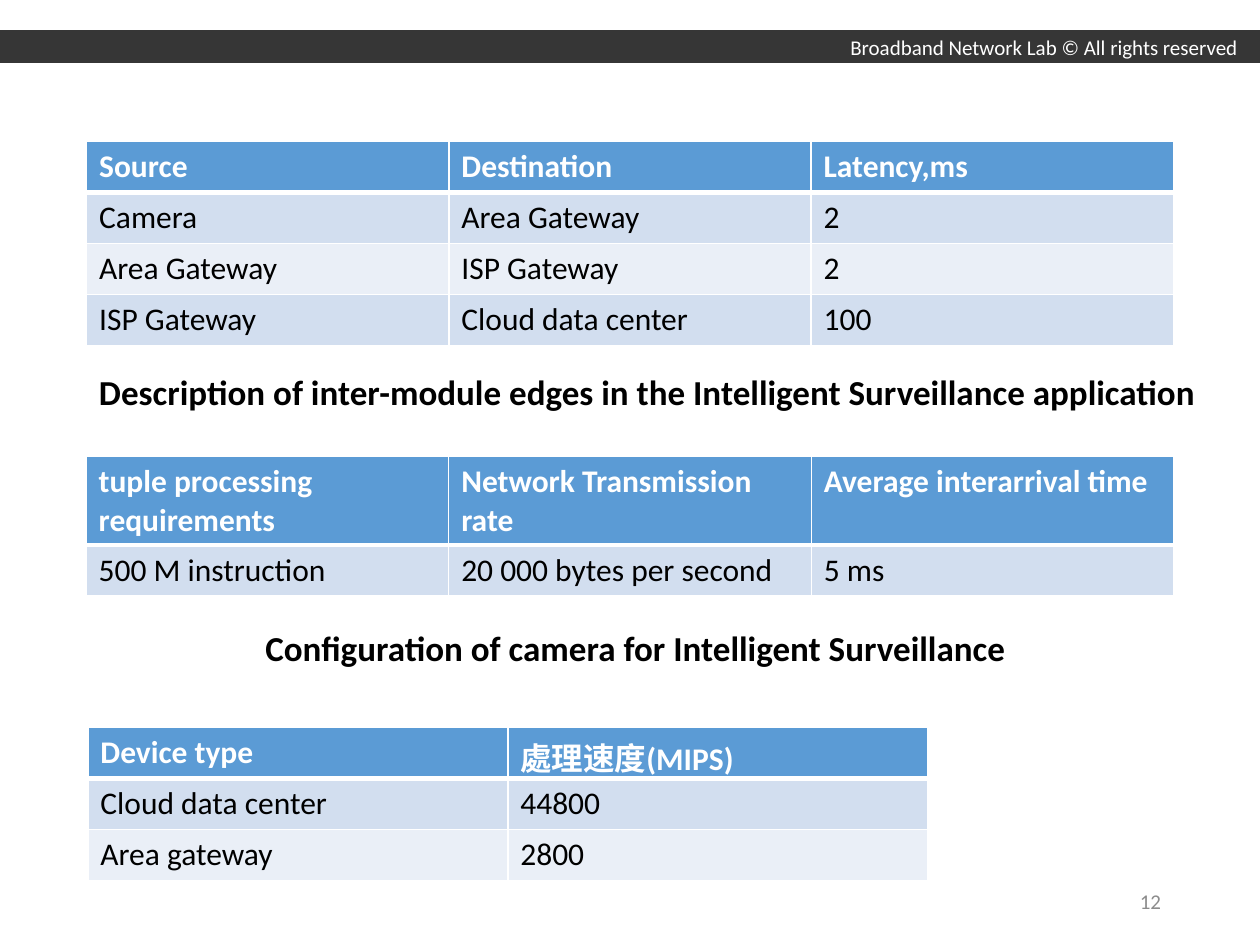
from lxml.etree import SubElement
from pptx import Presentation
from pptx.dml.color import RGBColor
from pptx.enum.shapes import MSO_SHAPE as Shape
from pptx.enum.text import MSO_ANCHOR as Anchor, PP_ALIGN as Align
from pptx.oxml.ns import qn
from pptx.util import Pt


def color(hex_string):
    return RGBColor.from_string(hex_string)


def write(frame, text, size=18, ink="000000", bold=False, align=Align.LEFT):
    paragraph = frame.paragraphs[0]
    paragraph.alignment = align
    run = paragraph.add_run()
    run.text = text
    run.font.name = "Calibri"
    run.font.size = Pt(size)
    run.font.bold = bold
    run.font.color.rgb = color(ink)


class SlideBuilder:
    white = "FFFFFF"
    bar_fill = "363636"
    header_fill = "5B9BD5"
    band_fills = ("D2DEEF", "EAEFF7")
    row_height = 29.2

    def __init__(self, slide):
        self.slide = slide

    def bar(self, left, top, width, height):
        shape = self.slide.shapes.add_shape(
            Shape.RECTANGLE, Pt(left), Pt(top), Pt(width), Pt(height))
        shape.shadow.inherit = False
        shape.fill.solid()
        shape.fill.fore_color.rgb = color(self.bar_fill)
        shape.line.fill.background()

    def text(self, left, top, width, height, text, wrap=True,
             anchor=Anchor.TOP, **style):
        shape = self.slide.shapes.add_textbox(
            Pt(left), Pt(top), Pt(width), Pt(height))
        frame = shape.text_frame
        frame.word_wrap = wrap
        frame.vertical_anchor = anchor
        write(frame, text, **style)

    def borders(self, cell, top, bottom):
        properties = cell._tc.get_or_add_tcPr()
        widths = {"lnL": 1, "lnR": 1, "lnT": top, "lnB": bottom}
        for side, width in widths.items():
            line = SubElement(properties, qn(f"a:{side}"), w=str(Pt(width)))
            fill = SubElement(line, qn("a:solidFill"))
            SubElement(fill, qn("a:srgbClr"), val=self.white)

    def table(self, left, top, column_width, rows, header_height=row_height):
        columns = len(rows[0])
        height = header_height + self.row_height * (len(rows) - 1)
        table = self.slide.shapes.add_table(
            len(rows), columns, Pt(left), Pt(top),
            Pt(column_width * columns), Pt(height)).table
        for column in table.columns:
            column.width = Pt(column_width)
        for index, values in enumerate(rows):
            header = index == 0
            table.rows[index].height = Pt(header_height if header else self.row_height)
            fill = self.header_fill if header else self.band_fills[(index - 1) % 2]
            for cell, value in zip(table.rows[index].cells, values):
                # The thick rule lies between the header and the first row
                self.borders(cell, top=3 if index == 1 else 1,
                             bottom=3 if header else 1)
                cell.fill.solid()
                cell.fill.fore_color.rgb = color(fill)
                write(cell.text_frame, value, bold=header,
                      ink=self.white if header else "000000")


def main():
    presentation = Presentation()
    presentation.slide_width, presentation.slide_height = Pt(720), Pt(540)
    slide = presentation.slides.add_slide(presentation.slide_layouts[6])
    builder = SlideBuilder(slide)

    # Top bar and page number
    builder.bar(0, 17.3, 720, 18.7)
    builder.text(478.8, 15.9, 238.3, 21.8,
                 "Broadband Network Lab © All rights reserved",
                 wrap=False, size=12, ink=builder.white)
    builder.text(508.5, 500.5, 162, 28.75, "12", anchor=Anchor.MIDDLE,
                 size=12, ink="8C8C8C", align=Align.RIGHT)

    # Latency between modules
    builder.table(49.5, 80.8, 207, [
        ("Source", "Destination", "Latency,ms"),
        ("Camera", "Area Gateway", "2"),
        ("Area Gateway", "ISP Gateway", "2"),
        ("ISP Gateway", "Cloud data center", "100"),
    ])
    builder.text(49.5, 208.3, 673, 31.5,
                 "Description of inter-module edges in the Intelligent "
                 "Surveillance application", size=20, bold=True)

    # Camera configuration
    builder.table(49.2, 260.9, 207.2, [
        ("tuple processing requirements", "Network Transmission rate",
         "Average interarrival time"),
        ("500 M instruction", "20 000 bytes per second", "5 ms"),
    ], header_height=50.4)
    builder.text(144.5, 354.5, 474.5, 31.5,
                 "Configuration of camera for Intelligent Surveillance",
                 size=20, bold=True)

    # Device speeds
    builder.table(50.2, 415.6, 240, [
        ("Device type", "處理速度(MIPS)"),
        ("Cloud data center", "44800"),
        ("Area gateway", "2800"),
    ])

    presentation.save("out.pptx")


if __name__ == "__main__":
    main()
